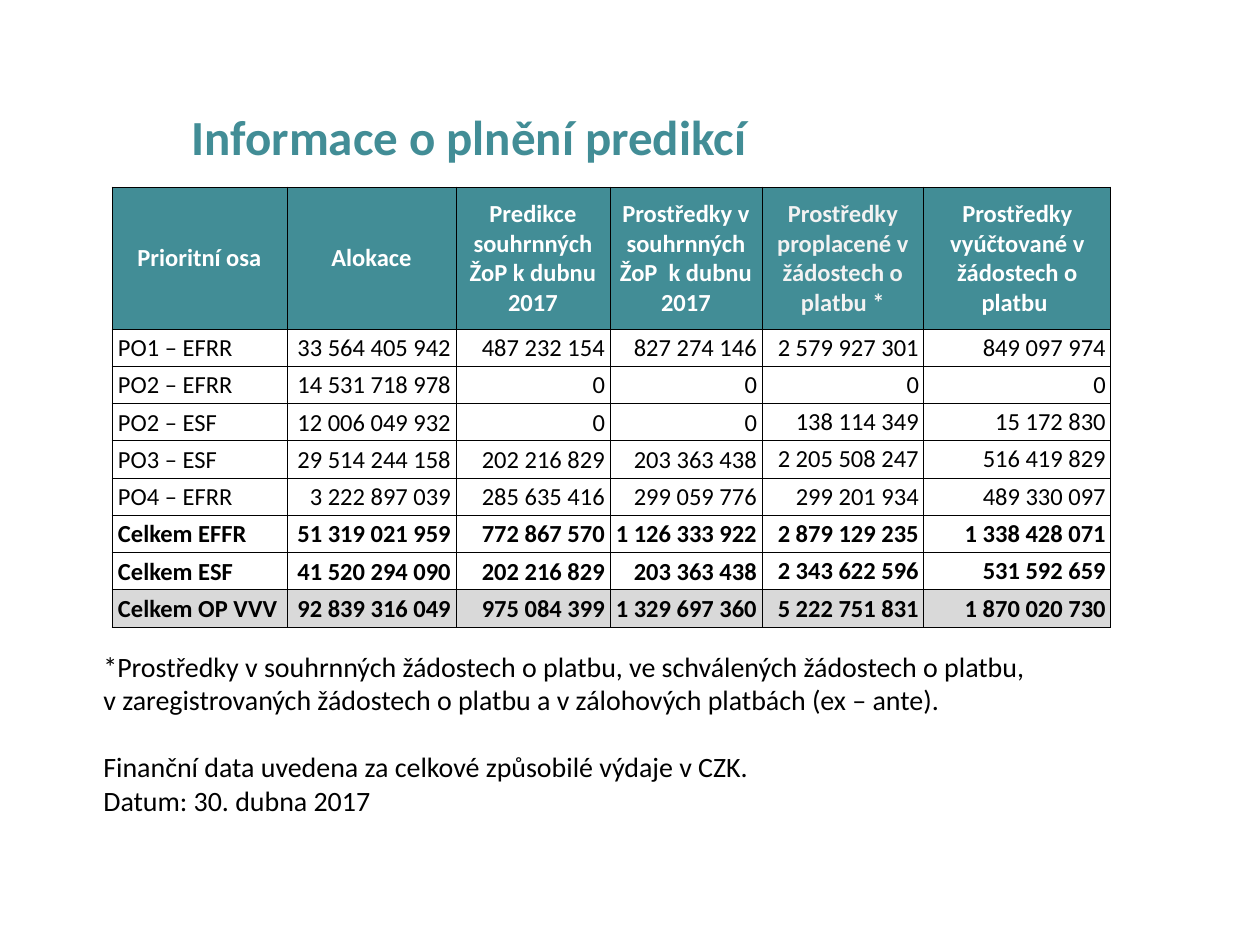
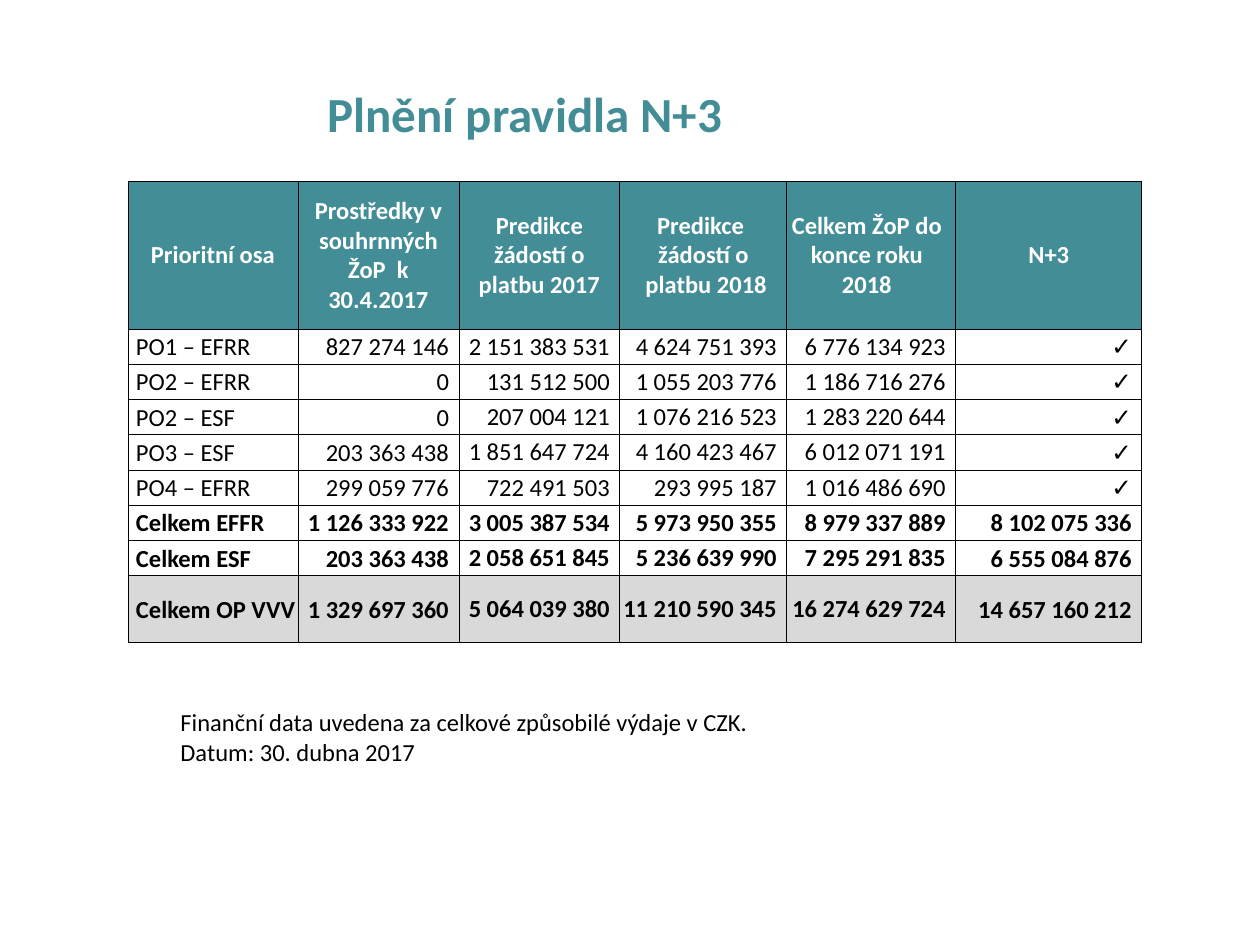
from dataclasses import dataclass

from lxml import etree
from pptx import Presentation
from pptx.dml.color import RGBColor
from pptx.enum.text import MSO_ANCHOR, MSO_AUTO_SIZE, PP_ALIGN
from pptx.oxml.ns import qn
from pptx.util import Emu, Pt

LEFT, CENTER, RIGHT = PP_ALIGN.LEFT, PP_ALIGN.CENTER, PP_ALIGN.RIGHT
MIDDLE = MSO_ANCHOR.MIDDLE
FIT_SHAPE, NO_FIT = MSO_AUTO_SIZE.SHAPE_TO_FIT_TEXT, MSO_AUTO_SIZE.NONE

PX_PER_INCH = 126
TITLE_ONLY = 5
COLORS = {
    "teal": "428D96",
    "white": "FFFFFF",
    "pale": "F2F2F2",
    "gray": "D9D9D9",
    "black": "000000",
}
FONT = "Calibri"
CHECK = "✓"
CHECK_FONT = "Arial"
TITLE_FORMAT = {"name": FONT, "size": Pt(28), "bold": True}
BORDER_WIDTH = Pt(0.5)
FIRST_TOTAL_ROW = 6
LABELS = (
    "PO1 – EFRR", "PO2 – EFRR", "PO2 – ESF", "PO3 – ESF", "PO4 – EFRR",
    "Celkem EFFR", "Celkem ESF", "Celkem OP VVV",
)
UNIT_NOTE = "Finanční data uvedena za celkové způsobilé výdaje v CZK."
DATE_NOTE = "Datum: 30. dubna 2017"


@dataclass(frozen=True)
class Box:
    x: int
    y: int
    w: int
    h: int


@dataclass(frozen=True)
class Column:
    head: str
    width: int
    top_pad: int
    values: tuple[str, ...]
    head_color: str = "white"
    head_right_pad: int = 1


@dataclass(frozen=True)
class Grid:
    x: int
    y: int
    head_h: int
    body_h: int
    total_h: int
    label_pad: int
    number_pad: int
    columns: tuple[Column, ...]


@dataclass(frozen=True)
class Note:
    box: Box
    size: int
    groups: tuple[tuple[str, ...], ...]


@dataclass(frozen=True)
class Page:
    title: str
    title_box: Box
    grid: Grid
    note: Note


PREDICTIONS = Page(
    "Informace o plnění predikcí",
    Box(179, 106, 815, 68),
    Grid(112, 187, 142, 261, 38, 6, 5, (
        Column("Prioritní osa", 175, 1, LABELS),
        Column("Alokace", 169, 1, (
            "33 564 405 942", "14 531 718 978", "12 006 049 932", "29 514 244 158",
            "3 222 897 039", "51 319 021 959", "41 520 294 090", "92 839 316 049")),
        Column("Predikce souhrnných ŽoP k dubnu 2017", 154, 1, (
            "487 232 154", "0", "0", "202 216 829",
            "285 635 416", "772 867 570", "202 216 829", "975 084 399")),
        Column("Prostředky v souhrnných ŽoP  k dubnu 2017", 152, 1, (
            "827 274 146", "0", "0", "203 363 438",
            "299 059 776", "1 126 333 922", "203 363 438", "1 329 697 360")),
        Column("Prostředky proplacené v žádostech o platbu *", 162, 0, (
            "2 579 927 301", "0", "138 114 349", "2 205 508 247",
            "299 201 934", "2 879 129 235", "2 343 622 596", "5 222 751 831"),
            head_color="pale"),
        Column("Prostředky vyúčtované v žádostech o platbu ", 187, 0, (
            "849 097 974", "0", "15 172 830", "516 419 829",
            "489 330 097", "1 338 428 071", "531 592 659", "1 870 020 730")),
    )),
    Note(Box(91, 643, 1105, 200), 16, (
        ("*Prostředky v souhrnných žádostech o platbu, ve schválených žádostech o platbu,",
         "v zaregistrovaných žádostech o platbu a v zálohových platbách (ex – ante)."),
        (UNIT_NOTE, DATE_NOTE),
    )),
)

RULE_N3 = Page(
    "Plnění pravidla N+3",
    Box(315, 76, 815, 81),
    Grid(128, 181, 148, 247, 67, 8, 10, (
        Column("Prioritní osa", 170, 1, LABELS),
        Column("Prostředky v souhrnných ŽoP  k 30.4.2017", 161, 1, (
            "827 274 146", "0", "0", "203 363 438",
            "299 059 776", "1 126 333 922", "203 363 438", "1 329 697 360")),
        Column("Predikce žádostí o platbu 2017", 161, 0, (
            "2 151 383 531", "131 512 500", "207 004 121", "1 851 647 724",
            "722 491 503", "3 005 387 534", "2 058 651 845", "5 064 039 380")),
        Column("Predikce \nžádostí o\n platbu 2018", 167, 0, (
            "4 624 751 393", "1 055 203 776", "1 076 216 523", "4 160 423 467",
            "293 995 187", "5 973 950 355", "5 236 639 990", "11 210 590 345")),
        Column("Celkem ŽoP do konce roku 2018", 169, 0, (
            "6 776 134 923", "1 186 716 276", "1 283 220 644", "6 012 071 191",
            "1 016 486 690", "8 979 337 889", "7 295 291 835", "16 274 629 724"),
            head_right_pad=10),
        Column("N+3", 186, 1, (
            *[CHECK] * 5, "8 102 075 336", "6 555 084 876", "14 657 160 212")),
    )),
    Note(Box(168, 701, 815, 72), 14, ((UNIT_NOTE, DATE_NOTE),)),
)


def px(n: int) -> Emu:
    return Emu(round(n * 914400 / PX_PER_INCH))


def rgb(name: str) -> RGBColor:
    return RGBColor.from_string(COLORS[name])


def apply(target, values: dict) -> None:
    for name, value in values.items():
        setattr(target, name, value)


def set_font(font, color: str, values: dict) -> None:
    apply(font, values)
    font.color.rgb = rgb(color)


def add_title(s, text: str, box: Box) -> None:
    sp = s.shapes.title
    apply(sp, {"left": px(box.x), "top": px(box.y), "width": px(box.w), "height": px(box.h)})
    tf = sp.text_frame
    apply(tf, {"text": text, "word_wrap": True, "auto_size": NO_FIT, "vertical_anchor": MIDDLE})
    p = tf.paragraphs[0]
    apply(p, {"alignment": LEFT, "line_spacing": 0.9})
    set_font(p.runs[0].font, "teal", TITLE_FORMAT)


def add_borders(cell) -> None:
    tc_pr = cell._tc.get_or_add_tcPr()
    for side in ("lnL", "lnR", "lnT", "lnB"):
        ln = etree.SubElement(tc_pr, qn(f"a:{side}"), w=str(BORDER_WIDTH))
        fill = etree.SubElement(ln, qn("a:solidFill"))
        etree.SubElement(fill, qn("a:srgbClr"), val=COLORS["black"])


def write_cell(cell, text: str, color: str, fill: str | None, align, pads: tuple[int, int, int],
               bold: bool) -> None:
    left, top, right = pads
    add_borders(cell)
    if fill:
        cell.fill.solid()
        cell.fill.fore_color.rgb = rgb(fill)
    else:
        cell.fill.background()
    apply(cell, {"text": text, "vertical_anchor": MIDDLE, "margin_left": px(left),
                 "margin_top": px(top), "margin_right": px(right), "margin_bottom": 0})
    name = CHECK_FONT if text == CHECK else FONT
    for p in cell.text_frame.paragraphs:
        p.alignment = align
        for r in p.runs:
            set_font(r.font, color, {"name": name, "size": Pt(14), "bold": bold})


def add_grid(s, grid: Grid) -> None:
    width = sum(col.width for col in grid.columns)
    height = grid.head_h + grid.body_h + grid.total_h
    last = len(LABELS)
    table = s.shapes.add_table(last + 1, len(grid.columns), px(grid.x), px(grid.y),
                               px(width), px(height)).table
    apply(table, {"first_row": False, "horz_banding": False})
    for row in table.rows:
        row.height = Emu(px(grid.body_h) // (last - 1))
    table.rows[0].height = px(grid.head_h)
    table.rows[last].height = px(grid.total_h)
    for c, col in enumerate(grid.columns):
        table.columns[c].width = px(col.width)
        write_cell(table.cell(0, c), col.head, col.head_color, "teal", CENTER,
                   (1, 1, col.head_right_pad), True)
        align = RIGHT if c else LEFT
        pads = (0, col.top_pad, grid.number_pad) if c else (grid.label_pad, 1, 1)
        for r, value in enumerate(col.values, 1):
            write_cell(table.cell(r, c), value, "black", "gray" if r == last else None,
                       align, pads, r >= FIRST_TOTAL_ROW)


def add_note(s, note: Note) -> None:
    box = note.box
    tf = s.shapes.add_textbox(px(box.x), px(box.y), px(box.w), px(box.h)).text_frame
    lines = [line for group in note.groups for line in group]
    apply(tf, {"word_wrap": True, "auto_size": FIT_SHAPE, "text": "\n".join(lines)})
    group_starts = [group[0] for group in note.groups[1:]]
    for p, line in zip(tf.paragraphs, lines):
        if line in group_starts:
            p.space_before = Pt(note.size * 1.2)
        set_font(p.runs[0].font, "black", {"name": FONT, "size": Pt(note.size)})


def main() -> None:
    prs = Presentation()
    apply(prs, {"slide_width": px(1260), "slide_height": px(945)})
    for page in (PREDICTIONS, RULE_N3):
        s = prs.slides.add_slide(prs.slide_layouts[TITLE_ONLY])
        add_title(s, page.title, page.title_box)
        add_grid(s, page.grid)
        add_note(s, page.note)
    prs.save("out.pptx")


if __name__ == "__main__":
    main()
